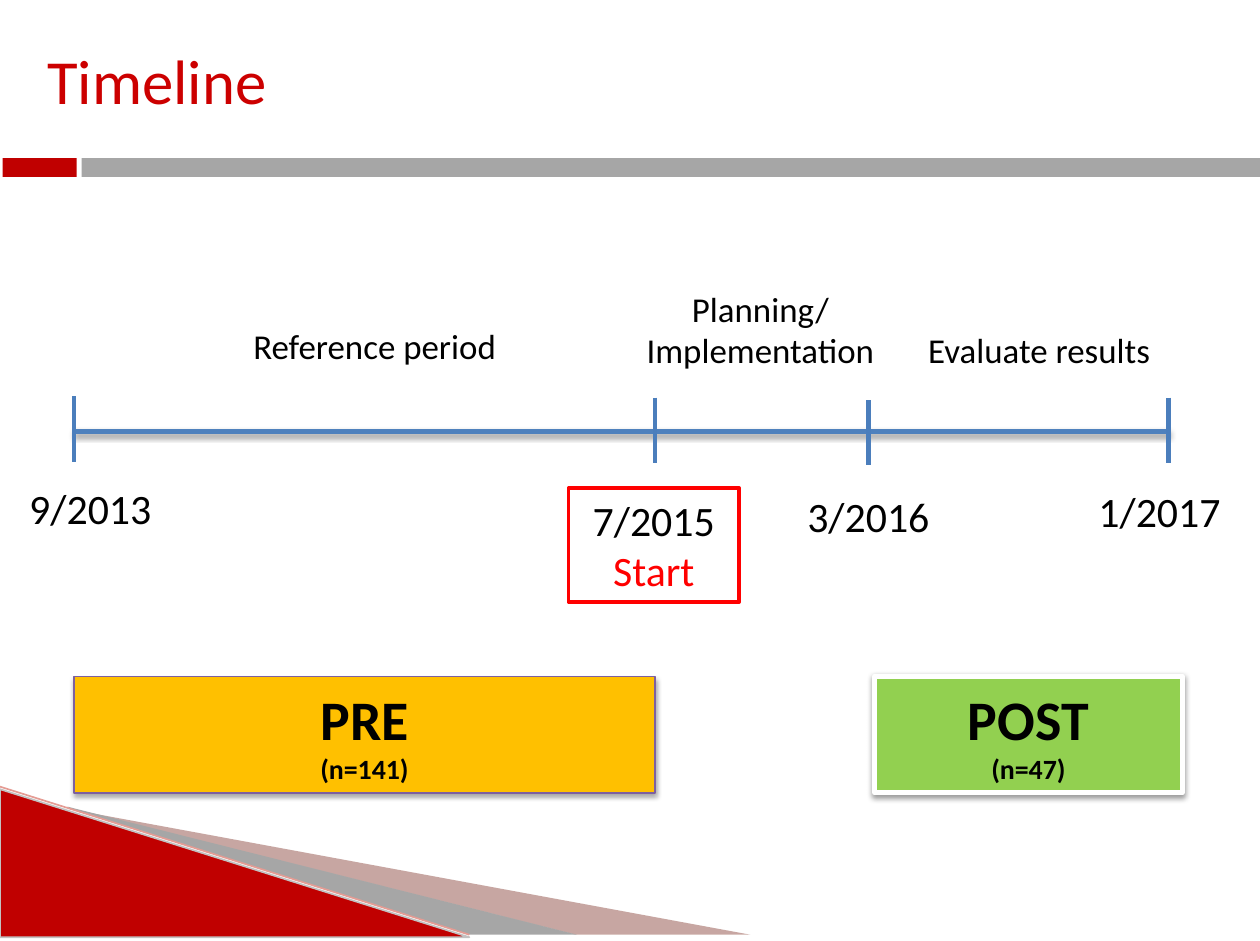
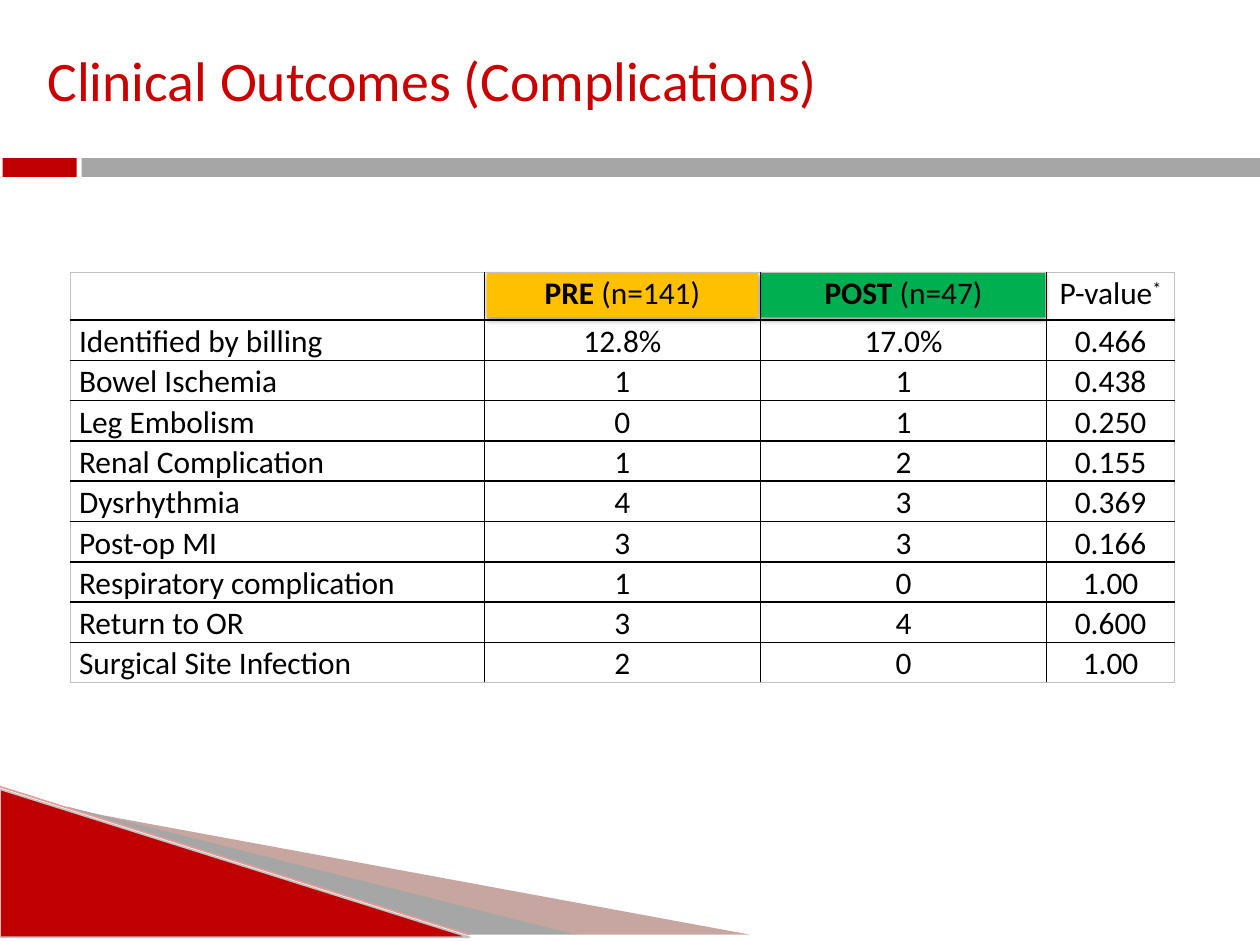
from dataclasses import dataclass

from lxml import etree
from pptx import Presentation
from pptx import util as u
from pptx.dml import color as dml
from pptx.enum import shapes, text
from pptx.oxml import ns

Inches = u.Inches
CENTER, LEFT = text.PP_ALIGN.CENTER, text.PP_ALIGN.LEFT
TOP, MIDDLE = text.MSO_ANCHOR.TOP, text.MSO_ANCHOR.MIDDLE


@dataclass(frozen=True)
class Theme:
    """Colours, type sizes and font of the deck."""
    font: str = "Calibri"
    title: str = "CC0000"
    ink: str = "000000"
    white: str = "FFFFFF"
    red: str = "C00000"
    gray: str = "A6A6A6"
    maroon: str = "742217"
    edge: str = "C3C1C1"
    blush: str = "E59C94"
    axis: str = "4F81BD"
    tick: str = "4B7EBC"
    alert: str = "FF0000"
    amber: str = "FFC000"
    violet: str = "7D60A0"
    lime: str = "92D050"
    green: str = "00B050"
    title_size: int = 36
    long_title_size: int = 32
    group_size: int = 32
    date_size: int = 24
    phase_size: int = 20
    table_size: int = 18
    count_size: int = 16


THEME = Theme()


def rgb(value):
    """Turn a hex string into a colour."""
    return dml.RGBColor.from_string(value)


def add_node(parent, tag, **attributes):
    """Append a drawing element with attributes."""
    return etree.SubElement(parent, ns.qn(tag),
                            {key: str(value) for key, value in attributes.items()})


def set_effect(shape, shadow=None):
    """Replace the themed shadow by none or by (opacity, distance)."""
    effects = add_node(shape.element.spPr, "a:effectLst")
    if shadow:
        opacity, distance = shadow
        outer = add_node(effects, "a:outerShdw", blurRad=u.Pt(3.1), dist=u.Pt(distance),
                         dir=5400000, rotWithShape=0)
        tint = add_node(outer, "a:srgbClr", val=THEME.ink)
        add_node(tint, "a:alpha", val=opacity * 1000)


def write(frame, paras, size, color=THEME.ink, bold=False, align=CENTER, anchor=TOP,
          indent=0, spacing=None):
    """Fill a text frame with paragraphs of (text, overrides) spans."""
    frame.word_wrap = True
    frame.vertical_anchor = anchor
    for index, spans in enumerate(paras):
        para = frame.add_paragraph() if index else frame.paragraphs[0]
        para.alignment = align
        if spacing:
            para.line_spacing = spacing
        if indent:
            para._p.get_or_add_pPr().set("marL", str(Inches(indent)))
        for words, changes in spans:
            span = para.add_run()
            span.text = words
            span.font.name = THEME.font
            span.font.size = u.Pt(changes.get("size", size))
            span.font.bold = changes.get("bold", bold)
            span.font.color.rgb = rgb(changes.get("color", color))
            if "baseline" in changes:
                span._r.get_or_add_rPr().set("baseline", str(changes["baseline"]))


class Slides:
    """Draws styled elements on the current slide."""

    def __init__(self):
        self.deck = Presentation()
        self.deck.slide_width, self.deck.slide_height = Inches(10.04), Inches(7.5)
        self.page = None

    def new_page(self, title, size):
        """Add a slide with the shared decoration and a title."""
        self.page = self.deck.slides.add_slide(self.deck.slide_layouts[6])
        self.outline([(0.56, 6.45), (5.98, 7.45), (4.59, 7.45), (0.56, 6.44)],
                     THEME.maroon, opacity=40)
        self.outline([(0.54, 6.43), (4.6, 7.45), (3.74, 7.45), (0.55, 6.44)], THEME.gray)
        self.shape(0, 6.29, 3.74, 1.18, THEME.red, line=(THEME.edge, 1),
                   kind=shapes.MSO_SHAPE.RIGHT_TRIANGLE)
        self.line((0, 6.27), (3.74, 7.45), THEME.blush, 0.95)
        self.shape(0, 1.25, 10.04, 0.17, THEME.white)
        self.shape(0.02, 1.26, 0.59, 0.15, THEME.red)
        self.shape(0.65, 1.26, 9.39, 0.15, THEME.gray)
        self.label(0.08, 0.01, 7.24, 1.25, title, size, color=THEME.title,
                   align=LEFT, anchor=MIDDLE, indent=0.2)

    def outline(self, points, fill, opacity=100):
        """Draw a closed polygon."""
        corners = [(Inches(x), Inches(y)) for x, y in points]
        builder = self.page.shapes.build_freeform(*corners[0])
        builder.add_line_segments(corners[1:], close=True)
        polygon = builder.convert_to_shape()
        self.paint(polygon, fill)
        if opacity < 100:
            tint = polygon.element.spPr.find(ns.qn("a:solidFill"))[0]
            add_node(tint, "a:alpha", val=opacity * 1000)

    def paint(self, shape, fill, line=None, shadow=None):
        """Set fill, line and effect of a shape."""
        shape.fill.solid()
        shape.fill.fore_color.rgb = rgb(fill)
        if line:
            shape.line.color.rgb, shape.line.width = rgb(line[0]), u.Pt(line[1])
        else:
            shape.line.fill.background()
        set_effect(shape, shadow)

    def shape(self, left, top, width, height, fill, line=None, shadow=None,
              kind=shapes.MSO_SHAPE.RECTANGLE):
        """Draw a preset shape and return it."""
        box = self.page.shapes.add_shape(kind, Inches(left), Inches(top),
                                         Inches(width), Inches(height))
        self.paint(box, fill, line, shadow)
        return box

    def line(self, start, end, color, width, shadow=None):
        """Draw a straight line."""
        x1, y1, x2, y2 = map(Inches, (*start, *end))
        rule = self.page.shapes.add_connector(shapes.MSO_CONNECTOR.STRAIGHT, x1, y1, x2, y2)
        rule.line.color.rgb, rule.line.width = rgb(color), u.Pt(width)
        set_effect(rule, shadow)

    def label(self, left, top, width, height, words, size, **style):
        """Place a one-paragraph text box."""
        box = self.page.shapes.add_textbox(Inches(left), Inches(top),
                                           Inches(width), Inches(height))
        write(box.text_frame, [[(words, {})]], size, **style)

    def table(self, left, top, widths, heights, rows):
        """Build a bordered table from rows of span lists."""
        frame = self.page.shapes.add_table(len(rows), len(widths), Inches(left), Inches(top),
                                           Inches(sum(widths)), Inches(sum(heights)))
        grid = frame.table
        grid.first_row = grid.horz_banding = False
        for column, width in zip(grid.columns, widths):
            column.width = Inches(width)
        for row, height in zip(grid.rows, heights):
            row.height = Inches(height)
        for r, row in enumerate(rows):
            for c, spans in enumerate(row):
                cell = grid.cell(r, c)
                cell.margin_left = cell.margin_right = Inches(0.07)
                cell.margin_top = cell.margin_bottom = 0
                write(cell.text_frame, [spans], THEME.table_size,
                      align=CENTER if c or not r else LEFT, spacing=1.07)
                cell.vertical_anchor = TOP
                cell.fill.background()
                self.borders(cell, {"L": c == 0, "R": c == len(widths) - 1,
                                    "T": r == 0, "B": r == len(rows) - 1})

    def borders(self, cell, outer):
        """Draw cell borders, pale on the outer sides."""
        properties = cell._tc.get_or_add_tcPr()
        for index, (side, is_outer) in enumerate(outer.items()):
            border = add_node(properties, f"a:ln{side}", w=u.Pt(1))
            paint = add_node(border, "a:solidFill")
            add_node(paint, "a:srgbClr", val=THEME.edge if is_outer else THEME.ink)
            properties.insert(index, border)


def timeline(slides):
    """Draw the study timeline."""
    slides.new_page("Timeline", THEME.title_size)
    slides.line((0.59, 3.44), (9.31, 3.44), THEME.axis, 3, shadow=(35, 1.8))
    for x, top in [(0.59, 3.16), (5.22, 3.17), (6.92, 3.19), (9.31, 3.17)]:
        slides.line((x, top), (x, top + 0.52), THEME.tick, 2.75)
    for left, top, width, date in [(0.08, 3.8, 1.28, "9/2013"), (6.26, 3.86, 1.32, "3/2016"),
                                   (8.58, 3.82, 1.32, "1/2017")]:
        slides.label(left, top, width, 0.5, date, THEME.date_size)
    start = slides.shape(4.53, 3.89, 1.36, 0.91, THEME.white, line=(THEME.alert, 2))
    write(start.text_frame, [[("7/2015", {})], [("Start", {"color": THEME.alert})]],
          THEME.date_size)
    for left, top, width, height, phase in [
            (1.29, 2.54, 3.39, 0.44, "Reference period"),
            (4.81, 2.24, 2.5, 0.77, "Planning/ Implementation"),
            (6.92, 2.57, 2.72, 0.44, "Evaluate results")]:
        slides.label(left, top, width, height, phase, THEME.phase_size)
    for left, width, fill, line, shadow, name, count in [
            (0.59, 4.63, THEME.amber, (THEME.violet, 0.75), (35, 1.8), "PRE", "(n=141)"),
            (6.97, 2.45, THEME.lime, (THEME.white, 3), (38, 1.6), "POST", "(n=47)")]:
        group = slides.shape(left, 5.39, width, 0.93, fill, line, shadow)
        write(group.text_frame, [[(name, {})], [(count, {"size": THEME.count_size})]],
              THEME.group_size, bold=True, anchor=MIDDLE)


def outcomes(slides):
    """Draw the table of complications."""
    slides.new_page("Clinical Outcomes (Complications)", THEME.long_title_size)
    for left, width, fill in [(6.06, 2.27, THEME.green), (3.88, 2.16, THEME.amber)]:
        slides.shape(left, 2.17, width, 0.36, fill, shadow=(38, 1.6))
    strong = {"bold": True}
    header = [[], [("PRE", strong), (" (n=141)", {})], [("POST", strong), (" (n=47)", {})],
              [("P-value", {}), ("*", {"baseline": 30000})]]
    results = [
        ("Identified by billing", "12.8%", "17.0%", "0.466"),
        ("Bowel Ischemia", "1", "1", "0.438"),
        ("Leg Embolism", "0", "1", "0.250"),
        ("Renal Complication", "1", "2", "0.155"),
        ("Dysrhythmia", "4", "3", "0.369"),
        ("Post-op MI", "3", "3", "0.166"),
        ("Respiratory complication", "1", "0", "1.00"),
        ("Return to OR", "3", "4", "0.600"),
        ("Surgical Site Infection", "2", "0", "1.00"),
    ]
    rows = [header] + [[[(value, {})] for value in row] for row in results]
    slides.table(0.56, 2.17, [3.3, 2.2, 2.28, 1.02], [0.38] + [0.32] * len(results), rows)


def main():
    """Build and save the deck."""
    slides = Slides()
    timeline(slides)
    outcomes(slides)
    slides.deck.save("out.pptx")


if __name__ == "__main__":
    main()
